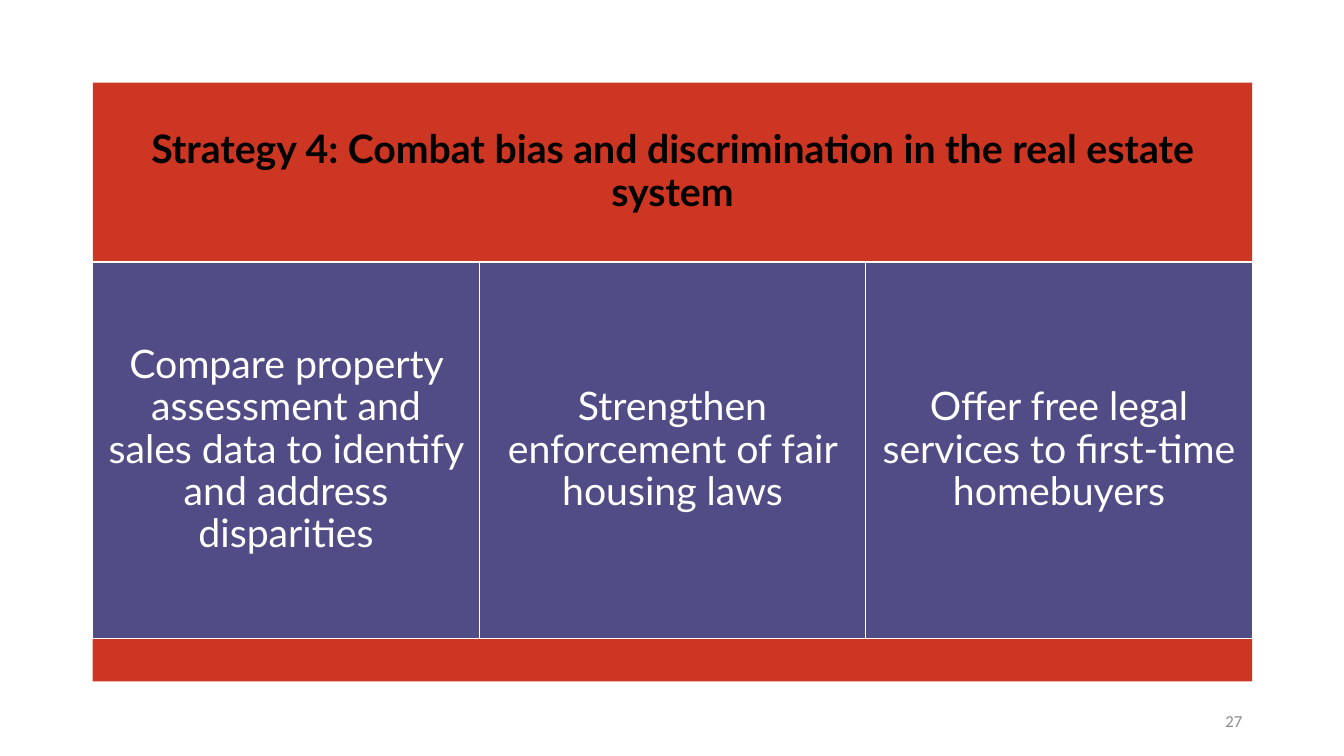
from dataclasses import dataclass

from pptx import Presentation
from pptx.dml.color import RGBColor
from pptx.enum.shapes import MSO_SHAPE
from pptx.enum.text import MSO_ANCHOR, MSO_AUTO_SIZE, PP_ALIGN
from pptx.util import Inches, Pt

RECT = MSO_SHAPE.RECTANGLE
MIDDLE = MSO_ANCHOR.MIDDLE
NO_FIT = MSO_AUTO_SIZE.NONE
CENTER, RIGHT = PP_ALIGN.CENTER, PP_ALIGN.RIGHT
TITLE_ONLY = 5


@dataclass(frozen=True)
class Theme:
    red: str = "CD3622"
    purple: str = "514C86"
    white: str = "FFFFFF"
    black: str = "000000"
    grey: str = "8C8C8C"
    font: str = "Lato"
    number_font: str = "Calibri"
    body_size: int = 28
    number_size: int = 12
    line_width: int = 1


@dataclass(frozen=True)
class Box:
    left: float
    top: float
    width: float
    height: float


@dataclass(frozen=True)
class Action:
    text: str
    inset: float = 0.12


THEME = Theme()
TITLE = "Strategy 4: Combat bias and discrimination in the real estate system"
ACTIONS = (
    Action("Compare property assessment and sales data to identify and address disparities"),
    Action("Strengthen enforcement of fair housing laws"),
    Action("Offer free legal services to first-time homebuyers", inset=0.1),
)

# Grid: three rows stacked from the top, actions in equal columns
LEFT, TOP, WIDTH = 0.92, 0.82, 11.5
HEADER_H, ACTION_H, FOOTER_H = 1.78, 3.74, 0.42
ACTION_TOP = TOP + HEADER_H
FOOTER_TOP = ACTION_TOP + ACTION_H
COLUMN_W = WIDTH / len(ACTIONS)
NUMBER_BOX = Box(LEFT + WIDTH - 3, 6.95, 3, 0.4)


def place(sp, box: Box) -> None:
    for name in ("left", "top", "width", "height"):
        setattr(sp, name, Inches(getattr(box, name)))


def paint(sp, color: str) -> None:
    sp.fill.solid()
    sp.fill.fore_color.rgb = RGBColor.from_string(color)


def write(sp, text: str, color: str, inset: float = 0.12, **formats) -> None:
    tf = sp.text_frame
    frame = {"word_wrap": True, "auto_size": NO_FIT, "vertical_anchor": MIDDLE}
    frame |= {f"margin_{side}": Inches(inset) for side in ("left", "top", "right", "bottom")}
    for name, value in frame.items():
        setattr(tf, name, value)
    p = tf.paragraphs[0]
    p.alignment = formats.pop("alignment", CENTER)
    p.line_spacing = formats.pop("line_spacing", 0.9)
    r = p.add_run()
    r.text = text
    font = {"name": THEME.font, "size": Pt(THEME.body_size), "bold": False} | formats
    for name, value in font.items():
        setattr(r.font, name, value)
    r.font.color.rgb = RGBColor.from_string(color)


def add_panel(slide, box: Box, color: str, outlined: bool = False):
    sp = slide.shapes.add_shape(RECT, 0, 0, 0, 0)
    place(sp, box)
    sp.shadow.inherit = False
    paint(sp, color)
    if outlined:
        sp.line.color.rgb = RGBColor.from_string(THEME.white)
        sp.line.width = Pt(THEME.line_width)
    else:
        sp.line.fill.background()
    return sp


def main() -> None:
    prs = Presentation()
    prs.slide_width, prs.slide_height = Inches(13.33), Inches(7.5)
    slide = prs.slides.add_slide(prs.slide_layouts[TITLE_ONLY])

    # Strategy title band
    title = slide.shapes.title
    place(title, Box(LEFT, TOP, WIDTH, HEADER_H))
    paint(title, THEME.red)
    write(title, TITLE, THEME.black, bold=True)

    # Action columns
    for i, action in enumerate(ACTIONS):
        box = Box(LEFT + i * COLUMN_W, ACTION_TOP, COLUMN_W, ACTION_H)
        sp = add_panel(slide, box, THEME.purple, outlined=True)
        write(sp, action.text, THEME.white, action.inset)

    # Closing band
    add_panel(slide, Box(LEFT, FOOTER_TOP, WIDTH, FOOTER_H), THEME.red)

    # Slide number
    number = slide.shapes.add_textbox(0, 0, 0, 0)
    place(number, NUMBER_BOX)
    write(number, "27", THEME.grey, 0.1, alignment=RIGHT, line_spacing=1.0,
          name=THEME.number_font, size=Pt(THEME.number_size))

    prs.save("out.pptx")


if __name__ == "__main__":
    main()
